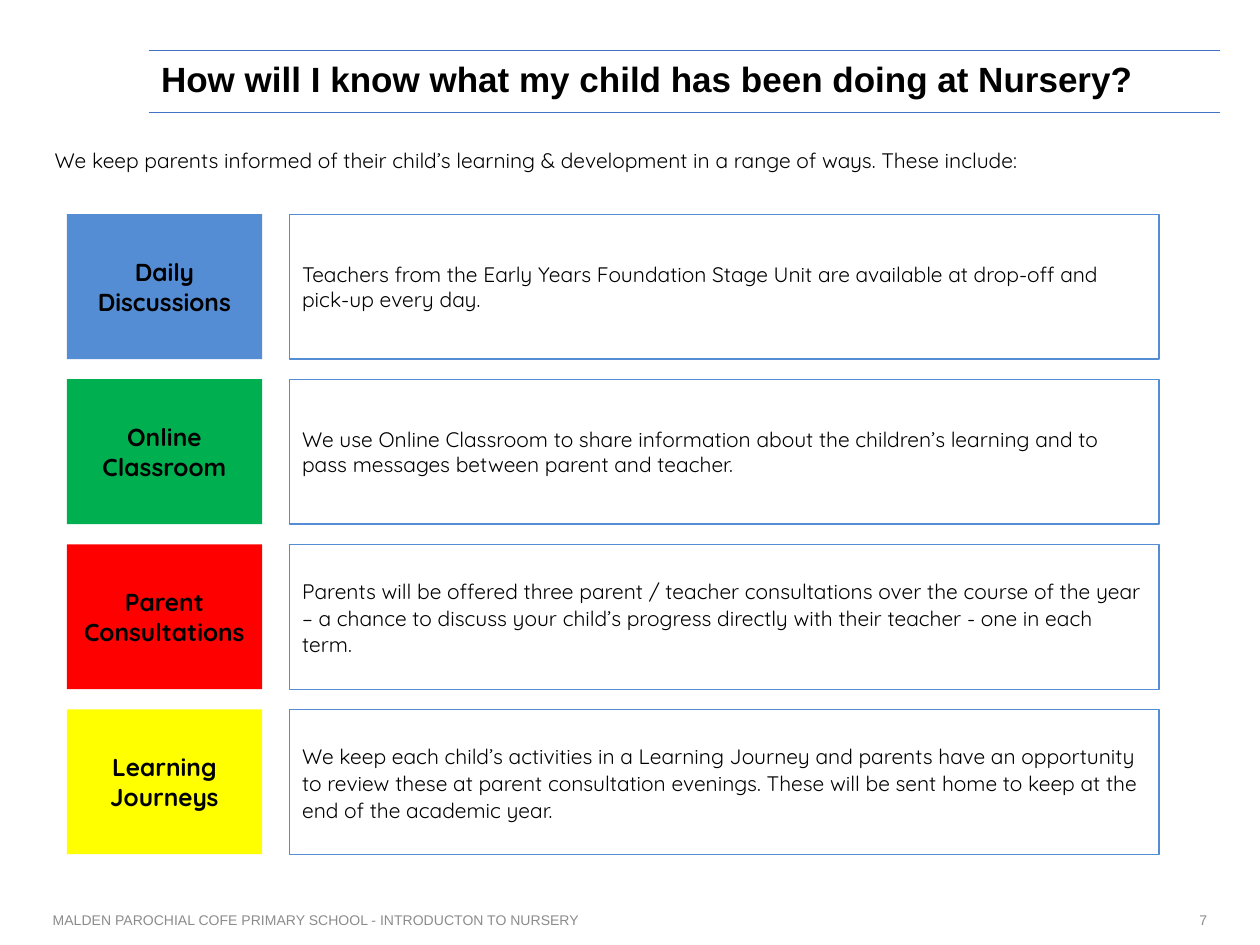
from lxml.etree import SubElement
from pptx import Presentation
from pptx.dml.color import RGBColor
from pptx.enum.shapes import MSO_CONNECTOR, MSO_SHAPE
from pptx.enum.text import MSO_ANCHOR, PP_ALIGN
from pptx.oxml.ns import qn
from pptx.util import Inches, Pt

BLACK = RGBColor(0x00, 0x00, 0x00)
GREY = RGBColor(0x8C, 0x8C, 0x8C)
RULE_BLUE = RGBColor(0x44, 0x72, 0xC4)
BLUE = RGBColor(0x54, 0x8D, 0xD4)
GREEN = RGBColor(0x00, 0xB0, 0x50)
RED = RGBColor(0xFF, 0x00, 0x00)
YELLOW = RGBColor(0xFF, 0xFF, 0x00)

TITLE_FONT = {"name": "Arial", "size": Pt(20), "bold": True}
FOOTER_FONT = {"name": "Arial", "size": Pt(8)}
LABEL_FONT = {"name": "Quicksand", "size": Pt(14), "bold": True}
BODY_FONT = {"name": "Quicksand", "size": Pt(12)}
LEFT = {"alignment": PP_ALIGN.LEFT}
CENTRE = {"alignment": PP_ALIGN.CENTER}
RIGHT = {"alignment": PP_ALIGN.RIGHT}
TITLE_PARAGRAPH = {**LEFT, "line_spacing": 0.9}
LOOSE = {**LEFT, "line_spacing": 1.07, "space_after": Pt(7)}

ROW_PITCH, ROW_HEIGHT = 1.31, 1.15
LABEL_WIDTH, COLUMN_GAP = 1.55, 0.22
WAYS = [
    ("Daily Discussions", BLUE, LEFT,
     "Teachers from the Early Years Foundation Stage Unit are available at "
     "drop-off and pick-up every day."),
    ("Online Classroom", GREEN, LEFT,
     "We use Online Classroom to share information about the children’s "
     "learning and to pass messages between parent and teacher."),
    ("Parent Consultations", RED, LOOSE,
     "Parents will be offered three parent / teacher consultations over the "
     "course of the year – a chance to discuss your child’s progress directly "
     "with their teacher - one in each term."),
    ("Learning Journeys", YELLOW, LOOSE,
     "We keep each child’s activities in a Learning Journey and parents have "
     "an opportunity to review these at parent consultation evenings. These "
     "will be sent home to keep at the end of the academic year."),
]


def write(shape, text, font, layout, color=BLACK, anchor=MSO_ANCHOR.MIDDLE):
    frame = shape.text_frame
    frame.word_wrap = True
    frame.vertical_anchor = anchor
    paragraph = frame.paragraphs[0]
    paragraph.text = text
    for target, values in ((paragraph, layout), (paragraph.font, font)):
        for name, value in values.items():
            setattr(target, name, value)
    paragraph.font.color.rgb = color


def add_text(slide, box, *content, **options):
    write(slide.shapes.add_textbox(*map(Inches, box)), *content, **options)


def add_box(slide, box, fill=None, line=None, kind=MSO_SHAPE.RECTANGLE):
    shape = slide.shapes.add_shape(kind, *map(Inches, box))
    shape.shadow.inherit = False
    if fill is None:
        shape.fill.background()
    else:
        shape.fill.solid()
        shape.fill.fore_color.rgb = fill
    if line is None:
        shape.line.fill.background()
    else:
        shape.line.color.rgb = line
        shape.line.width = Pt(0.75)
    return shape


def add_title(slide, box):
    """Place the title between two horizontal rules."""
    left, top, width, height = box
    for y in (top, top + height):
        rule = slide.shapes.add_connector(
            MSO_CONNECTOR.STRAIGHT, *map(Inches, (left, y, left + width, y)))
        rule.line.color.rgb = RULE_BLUE
        rule.line.width = Pt(0.5)
        SubElement(rule.element.spPr, qn("a:effectLst"))
    add_text(slide, box, "How will I know what my child has been doing at Nursery?",
             TITLE_FONT, TITLE_PARAGRAPH)


def add_intro(slide, box):
    shape = add_box(slide, box, kind=MSO_SHAPE.ROUNDED_RECTANGLE)
    write(shape, "We keep parents informed of their child’s learning & development "
          "in a range of ways. These include:", BODY_FONT, LOOSE,
          anchor=MSO_ANCHOR.TOP)


def add_ways(slide, box):
    """Place one row for each way: a coloured label and an outlined description."""
    left, top, width = box
    text_offset = LABEL_WIDTH + COLUMN_GAP
    for row, (label, color, layout, description) in enumerate(WAYS):
        y = top + row * ROW_PITCH
        label_box = add_box(slide, (left, y, LABEL_WIDTH, ROW_HEIGHT), fill=color)
        write(label_box, label, LABEL_FONT, CENTRE)
        description_box = add_box(
            slide, (left + text_offset, y, width - text_offset, ROW_HEIGHT), line=BLUE)
        write(description_box, description, BODY_FONT, layout)


def add_footer(slide, box):
    left, top, width, height = box
    number_width = width * 0.28
    add_text(slide, (left, top, width - number_width, height),
             "MALDEN PAROCHIAL COFE PRIMARY SCHOOL - INTRODUCTON TO NURSERY",
             FOOTER_FONT, LEFT, color=GREY)
    add_text(slide, (left + width - number_width, top, number_width, height),
             "7", FOOTER_FONT, RIGHT, color=GREY)


def main():
    presentation = Presentation()
    presentation.slide_width, presentation.slide_height = Inches(10), Inches(7.5)
    slide = presentation.slides.add_slide(presentation.slide_layouts[6])
    add_title(slide, (1.18, 0.4, 8.5, 0.49))
    add_intro(slide, (0.32, 1.09, 9.12, 0.33))
    add_ways(slide, (0.53, 1.7, 8.67))
    add_footer(slide, (0.32, 7.1, 9.36, 0.4))
    presentation.save("out.pptx")


if __name__ == "__main__":
    main()
